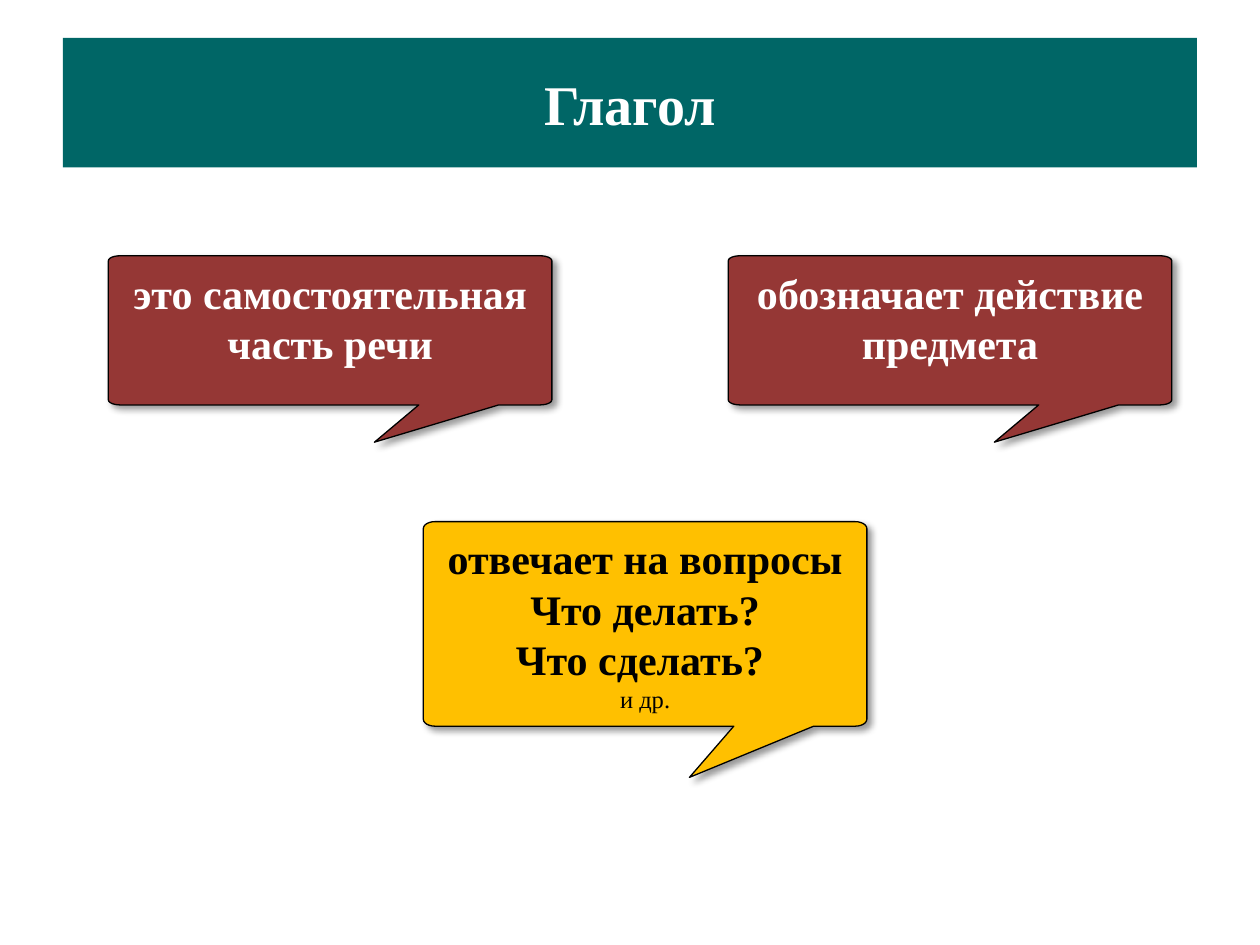
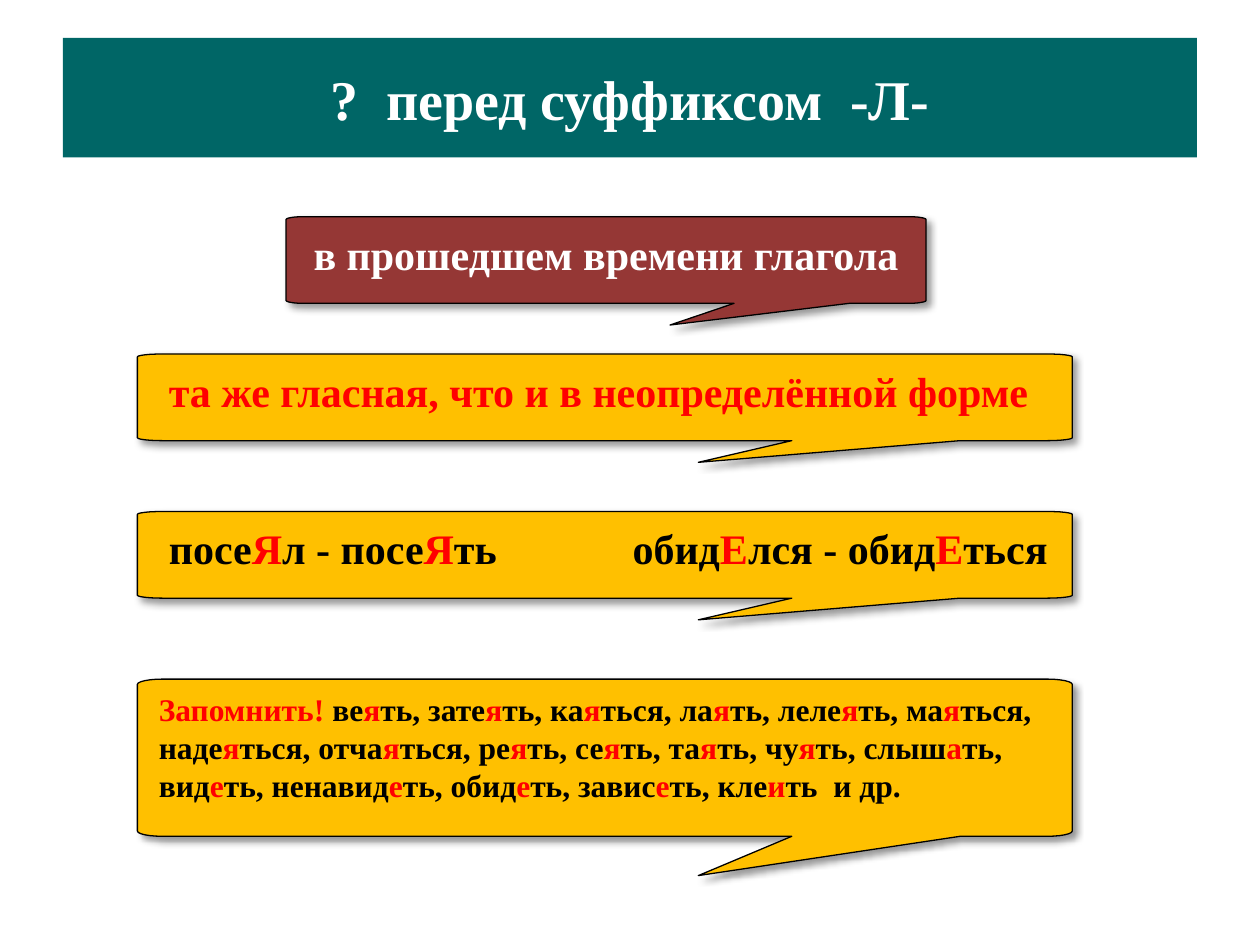
import math

from lxml import etree
from pptx import Presentation
from pptx.dml.color import RGBColor
from pptx.enum import shapes, text
from pptx.oxml import ns
from pptx.util import Inches, Pt

# Shared look
FONT = "Times New Roman"
COLOURS = {
    "teal": "006666",
    "brick": "953735",
    "amber": "FFC000",
    "white": "FFFFFF",
    "black": "000000",
    "red": "FF0000",
}
TEXT_ON = {"brick": "white", "amber": "black"}
CENTER, LEFT = text.PP_ALIGN.CENTER, text.PP_ALIGN.LEFT

# Content: letters between asterisks are red; a line is (text, size, bold)
SLIDES = [
    {
        "title": "Глагол",
        "band_height": 1.03,
        "callouts": [
            {"box": (0.86, 2.03, 3.52, 1.48), "fill": "brick",
             "lines": [("это самостоятельная часть речи", 24, True)]},
            {"box": (5.78, 2.03, 3.52, 1.48), "fill": "brick",
             "lines": [("обозначает действие предмета", 24, True)]},
            {"box": (3.36, 4.14, 3.52, 2.03), "fill": "amber",
             "lines": [("отвечает на вопросы", 24, True),
                       ("Что делать?", 24, True),
                       ("Что сделать? ", 24, True),
                       ("и др.", 14, False)]},
        ],
    },
    {
        "title": "?  перед суффиксом  -Л-",
        "band_height": 0.95,
        "callouts": [
            {"box": (2.27, 1.72, 5.08, 0.86), "fill": "brick",
             "lines": [("в прошедшем времени глагола", 24, True)]},
            {"box": (1.09, 2.81, 7.42, 0.86), "fill": "amber",
             "align": LEFT, "inset": 0.25,
             "lines": [("*та же гласная, что и в неопределённой форме*", 24, True)]},
            {"box": (1.09, 4.06, 7.42, 0.86), "fill": "amber",
             "align": LEFT, "inset": 0.25, "tab": 3.68,
             "lines": [("посе*Я*л - посе*Я*ть\tобид*Е*лся - обид*Е*ться", 24, True)]},
            {"box": (1.09, 5.39, 7.42, 1.56), "fill": "amber", "align": LEFT,
             "lines": [("*Запомнить!* ве*я*ть, зате*я*ть, ка*я*ться, ла*я*ть, "
                        "леле*я*ть, ма*я*ться, наде*я*ться, отча*я*ться, "
                        "ре*я*ть, се*я*ть, та*я*ть, чу*я*ть, слыш*а*ть, "
                        "вид*е*ть, ненавид*е*ть, обид*е*ть, завис*е*ть, "
                        "кле*и*ть  и др.", 18, True)]},
        ],
    },
]

# Callout proportions, as shares of its width and height
BODY = 0.8
CORNER = 0.027
TAIL = [(0.88, BODY), (0.6, 1), (0.7, BODY)]
CORNER_STEPS = 6


def colour(name):
    return RGBColor.from_string(COLOURS[name])


def style_para(para, size, bold, ink, align):
    para.alignment = align
    para.font.name = FONT
    para.font.size = Pt(size)
    para.font.bold = bold
    para.font.color.rgb = colour(ink)


def add_title(page, title, height):
    band = page.shapes.add_shape(shapes.MSO_SHAPE.RECTANGLE, Inches(0.5),
                                 Inches(0.3), Inches(9), Inches(height))
    band.shadow.inherit = False
    band.fill.solid()
    band.fill.fore_color.rgb = colour("teal")
    band.line.fill.background()
    band.text_frame.vertical_anchor = text.MSO_ANCHOR.MIDDLE
    para = band.text_frame.paragraphs[0]
    para.text = title
    style_para(para, 32, True, "white", CENTER)


def corner(x, y, start):
    """Quarter arc around (x, y), clockwise from the start angle."""
    angles = [math.radians(start + 90 * step / CORNER_STEPS)
              for step in range(CORNER_STEPS + 1)]
    return [(x + CORNER * math.cos(a), y + CORNER * math.sin(a)) for a in angles]


def callout_outline():
    near, right, low = CORNER, 1 - CORNER, BODY - CORNER
    return (corner(right, near, -90) + corner(right, low, 0) + TAIL
            + corner(near, low, 90) + corner(near, near, 180))


def add_shadow(shape):
    shape.shadow.inherit = False
    effects = shape._element.spPr.find(ns.qn("a:effectLst"))
    shadow = etree.SubElement(effects, ns.qn("a:outerShdw"), blurRad=str(Pt(4)),
                              dist=str(Pt(3)), dir=str(45 * 60000),
                              algn="tl", rotWithShape="0")
    tint = etree.SubElement(shadow, ns.qn("a:srgbClr"), val=COLOURS["black"])
    etree.SubElement(tint, ns.qn("a:alpha"), val="40000")


def add_tab(para, position):
    tabs = etree.Element(ns.qn("a:tabLst"))
    etree.SubElement(tabs, ns.qn("a:tab"), pos=str(Inches(position)), algn="l")
    para._p.get_or_add_pPr().insert(0, tabs)


def add_callout(page, box, fill, lines, align=CENTER, inset=0.17, tab=None):
    left, top, width, height = box
    points = [(Inches(left + x * width), Inches(top + y * height))
              for x, y in callout_outline()]
    builder = page.shapes.build_freeform(*points[0])
    builder.add_line_segments(points[1:], close=True)
    callout = builder.convert_to_shape()
    callout.fill.solid()
    callout.fill.fore_color.rgb = colour(fill)
    callout.line.color.rgb = colour("black")
    callout.line.width = Pt(0.75)
    add_shadow(callout)

    frame = callout.text_frame
    frame.word_wrap = True
    frame.vertical_anchor = text.MSO_ANCHOR.TOP
    frame.margin_left, frame.margin_right = Inches(inset), Inches(0.15)
    if align == CENTER:
        frame.margin_right = frame.margin_left
    frame.margin_top = Inches(0.09)
    for number, (line, size, bold) in enumerate(lines):
        para = frame.add_paragraph() if number else frame.paragraphs[0]
        style_para(para, size, bold, TEXT_ON[fill], align)
        if tab:
            add_tab(para, tab)
        for part, words in enumerate(line.split("*")):
            if words:
                span = para.add_run()
                span.text = words
                if part % 2:
                    span.font.color.rgb = colour("red")


def main():
    deck = Presentation()
    deck.slide_width, deck.slide_height = Inches(10), Inches(7.5)
    for content in SLIDES:
        page = deck.slides.add_slide(deck.slide_layouts[6])
        add_title(page, content["title"], content["band_height"])
        for callout in content["callouts"]:
            add_callout(page, **callout)
    deck.save("out.pptx")


if __name__ == "__main__":
    main()
